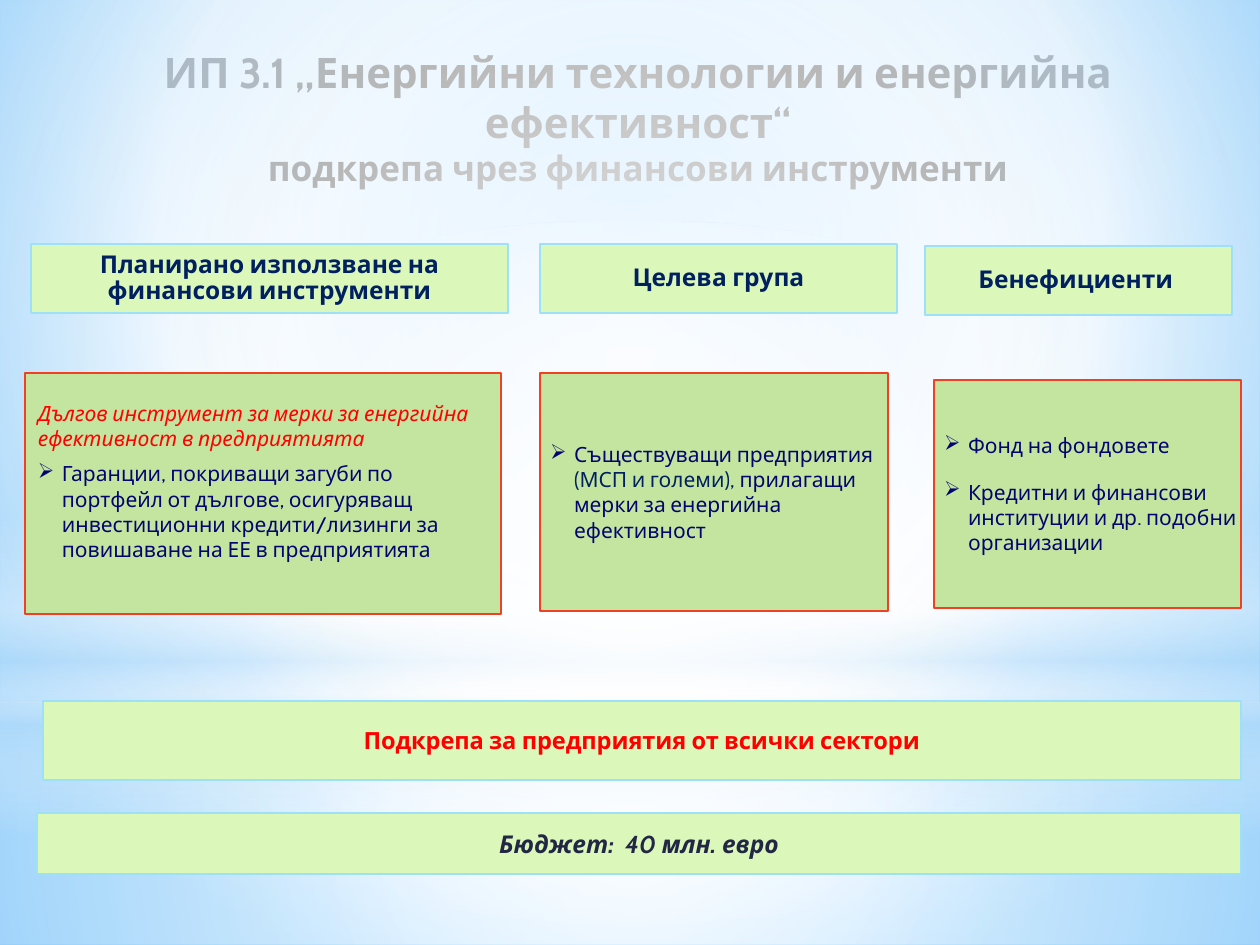
"""Builds the slide on financial instruments for energy efficiency."""
from dataclasses import dataclass

from lxml import etree
from pptx import Presentation
from pptx.dml.color import RGBColor
from pptx.enum import shapes, text
from pptx.oxml import ns
from pptx.util import Emu, Pt

EMU_PER_PX = 914400 / 126
FONT = "Cabin"
NAVY, INDIGO, RED, INK, GREY = "002060", "040470", "FF0000", "212745", "404040"
HEADING_FILL, HEADING_LINE = "DCF7BA", "9EE0F8"
DETAIL_FILL, DETAIL_LINE = "C4E59F", "F14124"
CENTRE = (50, 50, 50, 50)


@dataclass
class Glow:
    box: tuple[int, int, int, int]
    stops: list[tuple[int, str, int]]
    focus: tuple[int, int, int, int] | None = CENTRE
    kind: shapes.MSO_SHAPE = shapes.MSO_SHAPE.RECTANGLE


@dataclass
class Para:
    runs: list[tuple[str, str]]
    size: float = 12
    bold: bool = False
    italic: bool = False
    bullet: bool = False
    centred: bool = False
    before: int = 0
    after: int = 0
    spacing: float = 1.0


@dataclass
class Panel:
    box: tuple[int, int, int, int]
    paras: list[Para]
    fill: str = HEADING_FILL
    line: str = HEADING_LINE
    weight: float = 1.25
    insets: tuple[int, int, int, int] = (13, 6, 13, 6)


def px(value: float) -> Emu:
    return Emu(round(value * EMU_PER_PX))


def colour(value: str) -> RGBColor:
    return RGBColor.from_string(value)


def child(parent, tag: str, **attributes):
    node = etree.SubElement(parent, ns.qn(tag))
    for name, value in attributes.items():
        node.set(name, str(value))
    return node


def paint_gradient(fill, owner, stops, focus) -> None:
    fill.gradient()
    gradient = next(owner.iter(ns.qn("a:gradFill")))
    for old in list(gradient):
        gradient.remove(old)
    stop_list = child(gradient, "a:gsLst")
    for position, value, opacity in stops:
        stop = child(stop_list, "a:gs", pos=position * 1000)
        child(child(stop, "a:srgbClr", val=value), "a:alpha", val=opacity * 1000)
    if focus is None:
        child(gradient, "a:lin", ang=90 * 60000, scaled=0)
    else:
        circle = child(gradient, "a:path", path="circle")
        sides = {side: edge * 1000 for side, edge in zip("ltrb", focus)}
        child(circle, "a:fillToRect", **sides)


def add_glow(slide, glow: Glow) -> None:
    shape = slide.shapes.add_shape(glow.kind, *map(px, glow.box))
    shape.shadow.inherit = False
    shape.line.fill.background()
    paint_gradient(shape.fill, shape.element, glow.stops, glow.focus)


def style_run(run, size: float, value: str, bold: bool, italic: bool = False) -> None:
    font = run.font
    font.name, font.size, font.bold, font.italic = FONT, Pt(size), bold, italic
    font.color.rgb = colour(value)


def write_para(paragraph, para: Para) -> None:
    paragraph.alignment = text.PP_ALIGN.CENTER if para.centred else text.PP_ALIGN.LEFT
    paragraph.space_before, paragraph.space_after = Pt(para.before), Pt(para.after)
    paragraph.line_spacing = para.spacing
    if para.bullet:
        properties = paragraph._p.get_or_add_pPr()
        properties.set("marL", str(px(24)))
        properties.set("indent", str(px(-24)))
        child(properties, "a:buChar", char="➢")
    for words, value in para.runs:
        run = paragraph.add_run()
        run.text = words
        style_run(run, para.size, value, para.bold, para.italic)


def add_panel(slide, panel: Panel) -> None:
    shape = slide.shapes.add_shape(shapes.MSO_SHAPE.RECTANGLE, *map(px, panel.box))
    shape.shadow.inherit = False
    shape.fill.solid()
    shape.fill.fore_color.rgb = colour(panel.fill)
    shape.line.color.rgb = colour(panel.line)
    shape.line.width = Pt(panel.weight)
    frame = shape.text_frame
    frame.word_wrap = True
    frame.vertical_anchor = text.MSO_ANCHOR.MIDDLE
    (frame.margin_left, frame.margin_top,
     frame.margin_right, frame.margin_bottom) = map(px, panel.insets)
    for index, para in enumerate(panel.paras):
        write_para(frame.add_paragraph() if index else frame.paragraphs[0], para)


def add_title(slide) -> None:
    title = slide.shapes.title
    title.left, title.top, title.width, title.height = map(px, (8, 35, 1260, 165))
    frame = title.text_frame
    frame.auto_size = text.MSO_AUTO_SIZE.NONE
    frame.vertical_anchor = text.MSO_ANCHOR.MIDDLE
    heading = frame.paragraphs[0]
    heading.text = ("ИП 3.1 „Енергийни технологии и енергийна ефективност“"
                    "\vподкрепа чрез финансови инструменти")
    heading.alignment = text.PP_ALIGN.CENTER
    for run, size in zip(heading.runs, (24, 20)):
        style_run(run, size, GREY, True)


def heading(box, words: str, insets=(13, 6, 13, 6)) -> Panel:
    para = Para([(words, NAVY)], 14, bold=True, centred=True, spacing=0.9)
    return Panel(box, [para], insets=insets)


def detail(box, paras: list[Para], insets=(10, 6, 0, 6)) -> Panel:
    return Panel(box, paras, DETAIL_FILL, DETAIL_LINE, 1, insets)


def item(*runs: tuple[str, str], before: int = 0) -> Para:
    return Para(list(runs), bullet=True, before=before, after=6)


GLOWS = [
    Glow((0, 703, 1260, 242),
         [(0, "FFFFFF", 91), (37, "FFFFFF", 76), (100, "B4DCFA", 79)]),
    Glow((0, 0, 1260, 703),
         [(0, "FFFFFF", 89), (48, "FFFFFF", 62), (100, "B4DCFA", 79)]),
    Glow((0, 519, 1260, 315),
         [(0, "FFFFFF", 0), (29, "FFFFFF", 30), (45, "B4DCFA", 40),
          (55, "FFFFFF", 26), (65, "B4DCFA", 60), (100, "FFFFFF", 0)], None),
    Glow((0, 221, 1260, 703), [(0, "FFFFFF", 100), (56, "FFFFFF", 0)],
         kind=shapes.MSO_SHAPE.OVAL),
]

PANELS = [
    heading((31, 244, 477, 69), "Планирано използване на финансови инструменти",
            (0, 0, 0, 0)),
    detail((25, 373, 476, 241), [
        Para([("Дългов инструмент за мерки за енергийна ефективност в предприятията",
               RED)], italic=True, after=6),
        item(("Гаранции, покриващи загуби по портфейл от дългове, осигуряващ "
              "инвестиционни кредити/лизинги за повишаване на ЕЕ в предприятията",
              INDIGO)),
    ], (13, 6, 13, 31)),
    heading((540, 244, 357, 69), "Целева група"),
    detail((540, 373, 348, 238), [
        item(("Съществуващи предприятия ", INDIGO), ("(МСП и големи), ", NAVY),
             ("прилагащи мерки за енергийна ефективност", INDIGO)),
    ]),
    heading((925, 246, 307, 69), "Бенефициенти "),
    detail((934, 380, 307, 228), [
        item(("Фонд на фондовете", INDIGO), before=6),
        item(("Кредитни и финансови институции и др. подобни организации", INDIGO),
             before=6),
    ]),
    Panel((43, 701, 1198, 79), [
        Para([("Подкрепа за предприятия от всички сектори", RED)], 13.5,
             bold=True, centred=True, before=6, after=6)]),
    Panel((37, 813, 1204, 61), [
        Para([("Бюджет:  40 млн. евро", INK)], 14, bold=True, italic=True,
             centred=True, before=6)]),
]


def main() -> None:
    deck = Presentation()
    deck.slide_width, deck.slide_height = px(1260), px(945)
    slide = deck.slides.add_slide(deck.slide_layouts[5])
    paint_gradient(slide.background.fill, slide.element,
                   [(0, "9ED5FF", 100), (60, "FFFFFF", 100), (100, "5BB9FF", 100)],
                   (20, 10, 20, 60))
    for glow in GLOWS:
        add_glow(slide, glow)
    for panel in PANELS:
        add_panel(slide, panel)
    add_title(slide)
    deck.save("out.pptx")


if __name__ == "__main__":
    main()
